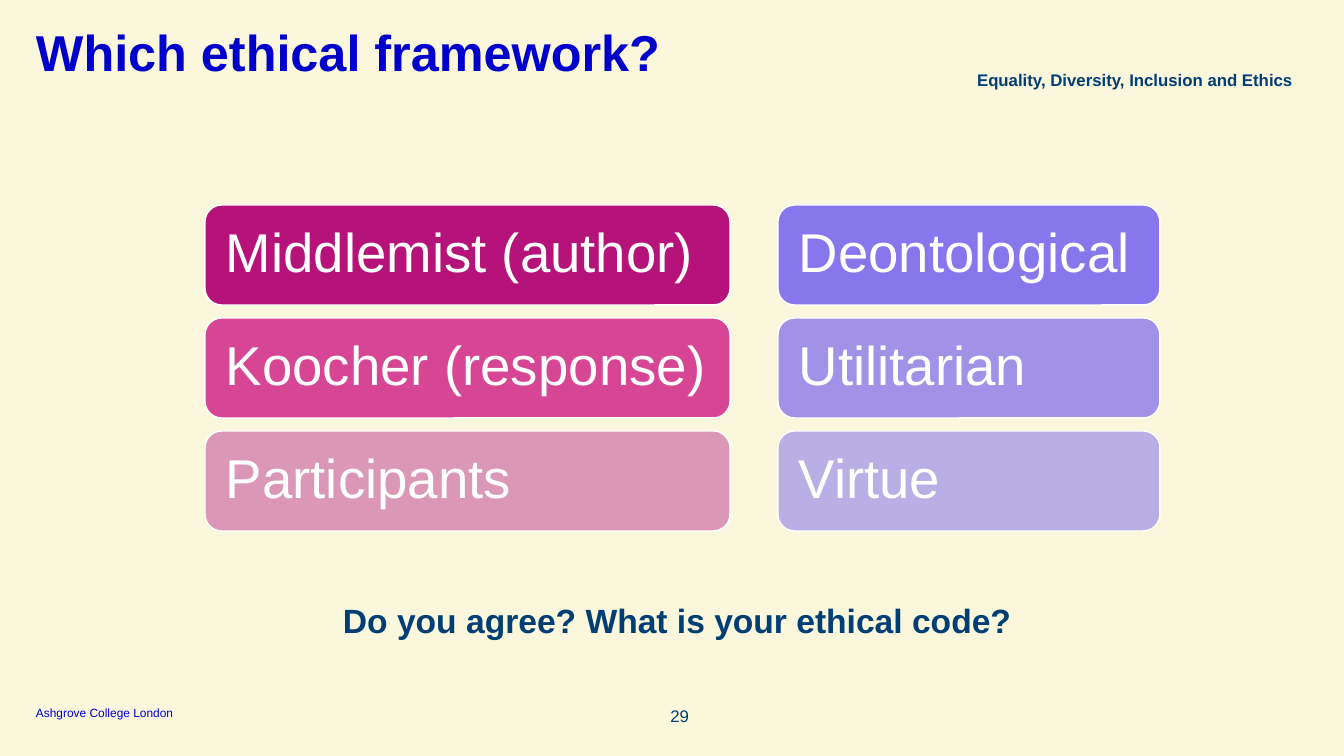
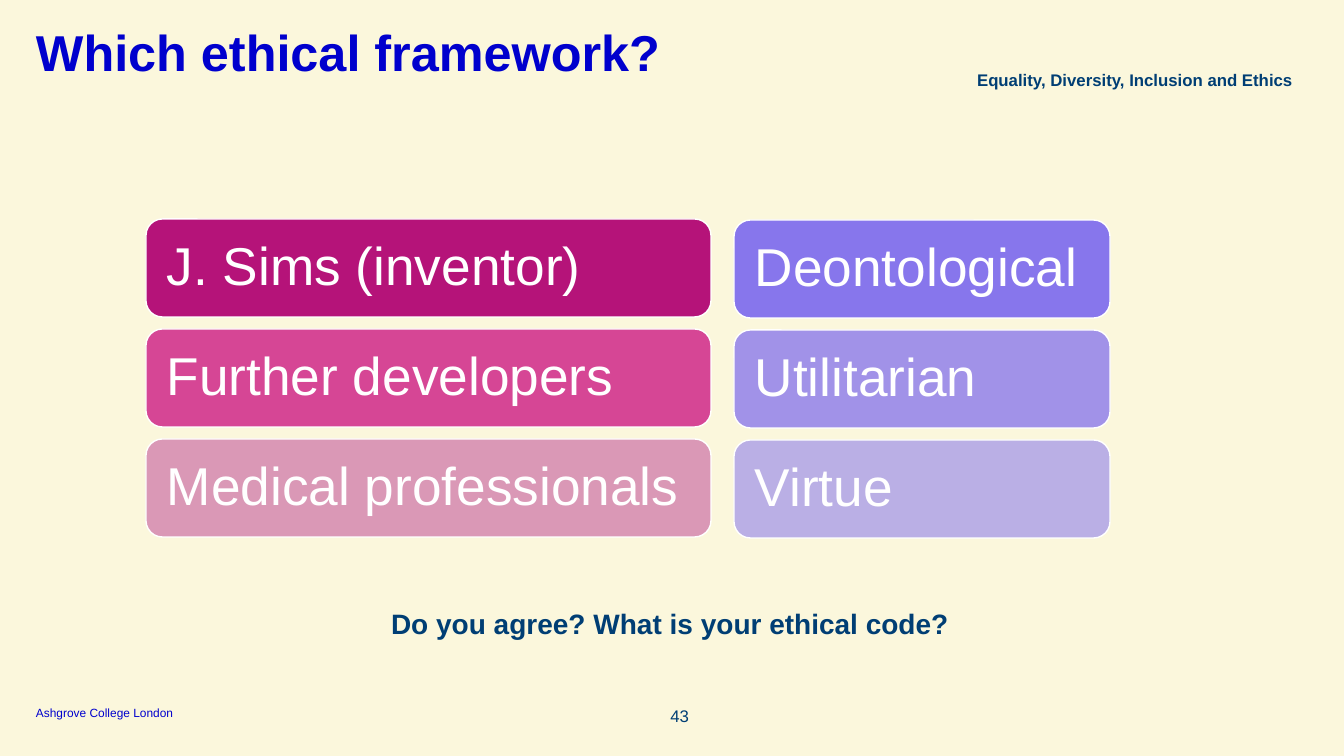
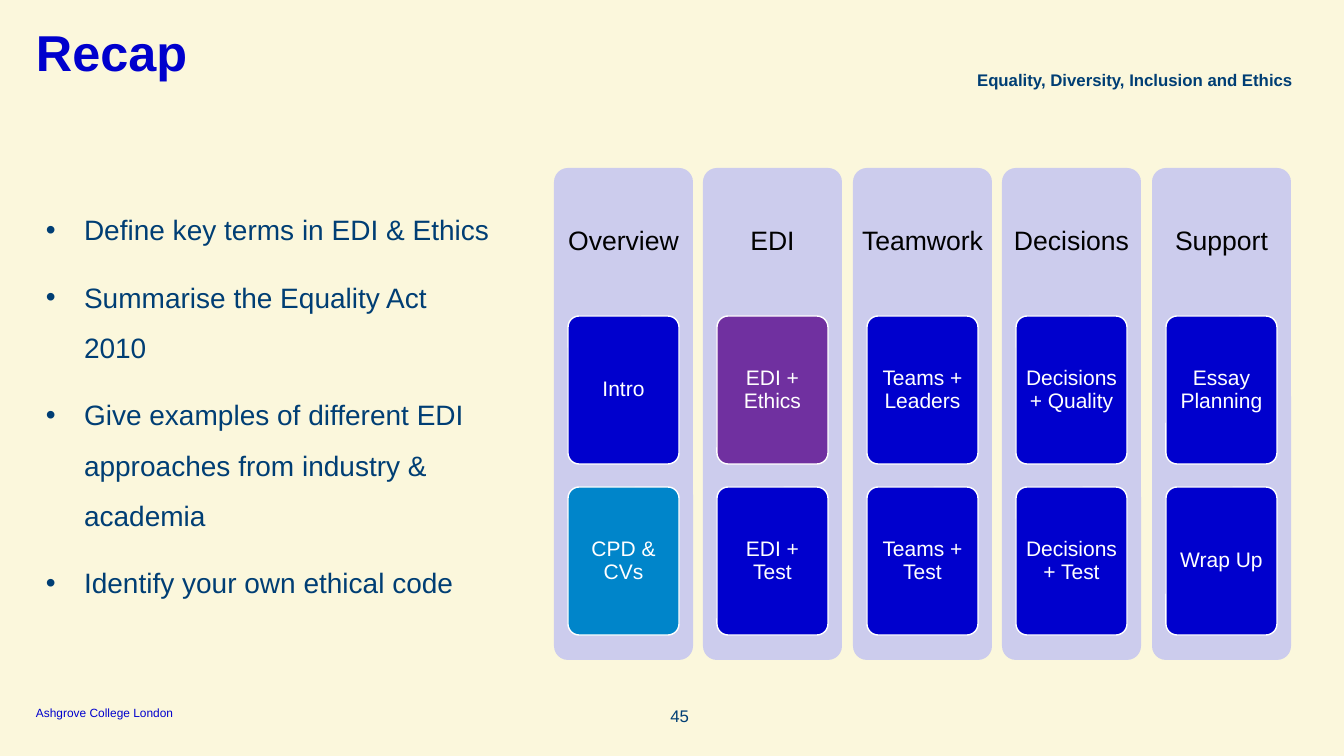
from dataclasses import dataclass
from typing import Optional

from lxml.etree import SubElement
from pptx import Presentation
from pptx.dml.color import RGBColor
from pptx.enum.shapes import MSO_SHAPE
from pptx.enum.text import MSO_ANCHOR, MSO_AUTO_SIZE, PP_ALIGN
from pptx.oxml.ns import qn
from pptx.util import Emu, Pt

SLIDE_WIDTH, SLIDE_HEIGHT = 1344, 756
EMU_PER_PX = 12192000 / SLIDE_WIDTH

CREAM = RGBColor(0xFB, 0xF7, 0xDC)
BLUE = RGBColor(0x00, 0x00, 0xCD)
NAVY = RGBColor(0x00, 0x3E, 0x74)
WHITE = RGBColor(0xFF, 0xFF, 0xFF)
BLACK = RGBColor(0x00, 0x00, 0x00)
MAGENTA = RGBColor(0xB5, 0x13, 0x79)
PINK = RGBColor(0xD6, 0x46, 0x95)
ROSE = RGBColor(0xDA, 0x98, 0xB6)
VIOLET = RGBColor(0x7B, 0x68, 0xEE)
LAVENDER = RGBColor(0xCC, 0xCC, 0xED)
SKY = RGBColor(0x00, 0x85, 0xCA)
PURPLE = RGBColor(0x70, 0x30, 0xA0)

FONT = "Arial"
LAYOUT_CONTENT, LAYOUT_TITLE_ONLY = 1, 5
INSTITUTION = "Ashgrove College London"
SECTION = "Equality, Diversity, Inclusion and Ethics"
QUESTION = "Do you agree? What is your ethical code?"


@dataclass(frozen=True)
class Box:
    left: int
    top: int
    width: int
    height: int

    def emu(self) -> list[Emu]:
        lengths = (self.left, self.top, self.width, self.height)
        return [px(length) for length in lengths]


@dataclass(frozen=True)
class Tile:
    label: str
    color: RGBColor
    opacity: int = 100


@dataclass(frozen=True)
class Stack:
    first: Box
    pitch: int
    tiles: tuple[Tile, ...]


@dataclass(frozen=True)
class FrameworkSlide:
    number: int
    tile_size: int
    stacks: tuple[Stack, ...]
    question_box: Box
    question_size: int


@dataclass(frozen=True)
class Theme:
    heading: str
    sessions: tuple[Tile, Tile]


FRAMEWORKS = (
    Tile("Deontological", VIOLET, 90),
    Tile("Utilitarian", VIOLET, 70),
    Tile("Virtue", VIOLET, 50),
)
FRAMEWORK_SLIDES = (
    FrameworkSlide(
        29, 39,
        (
            Stack(Box(205, 205, 525, 100), 113, (
                Tile("Middlemist (author)", MAGENTA),
                Tile("Koocher (response)", PINK),
                Tile("Participants", ROSE),
            )),
            Stack(Box(778, 205, 382, 100), 113, FRAMEWORKS),
        ),
        Box(333, 595, 711, 50), 24,
    ),
    FrameworkSlide(
        43, 38,
        (
            Stack(Box(146, 219, 565, 98), 110, (
                Tile("J. Sims (inventor)", MAGENTA),
                Tile("Further developers", PINK),
                Tile("Medical professionals", ROSE),
            )),
            Stack(Box(734, 220, 376, 98), 110, FRAMEWORKS),
        ),
        Box(381, 601, 652, 44), 20,
    ),
)
OBJECTIVES = (
    "Define key terms in EDI & Ethics",
    "Summarise the Equality Act 2010",
    "Give examples of different EDI approaches from industry & academia",
    "Identify your own ethical code",
)
THEMES = (
    Theme("Overview", (Tile("Intro", BLUE), Tile("CPD & CVs", SKY))),
    Theme("EDI", (Tile("EDI + Ethics", PURPLE), Tile("EDI + Test", BLUE))),
    Theme("Teamwork", (Tile("Teams + Leaders", BLUE), Tile("Teams + Test", BLUE))),
    Theme("Decisions", (Tile("Decisions + Quality", BLUE), Tile("Decisions + Test", BLUE))),
    Theme("Support", (Tile("Essay Planning", BLUE), Tile("Wrap Up", BLUE))),
)


def px(length: int) -> Emu:
    return Emu(round(length * EMU_PER_PX))


def write_text(
    holder,
    *lines: str,
    size: float,
    color: RGBColor,
    bold: bool = False,
    align: PP_ALIGN = PP_ALIGN.LEFT,
    anchor: MSO_ANCHOR = MSO_ANCHOR.TOP,
    insets: tuple[int, int] = (0, 0),
    line_spacing: float = 1.0,
    space: int = 0,
    bullet_indent: int = 0,
) -> None:
    frame = holder.text_frame
    frame.word_wrap = True
    frame.auto_size = MSO_AUTO_SIZE.NONE
    frame.vertical_anchor = anchor
    frame.margin_left = frame.margin_right = px(insets[0])
    frame.margin_top = frame.margin_bottom = px(insets[1])
    for index, line in enumerate(lines):
        paragraph = frame.add_paragraph() if index else frame.paragraphs[0]
        paragraph.alignment = align
        paragraph.line_spacing = line_spacing
        paragraph.space_before = paragraph.space_after = Pt(space)
        run = paragraph.add_run()
        run.text = line
        run.font.name = FONT
        run.font.size = Pt(size)
        run.font.bold = bold
        run.font.color.rgb = color
        if bullet_indent:
            properties = paragraph._p.get_or_add_pPr()
            properties.set("marL", str(px(bullet_indent)))
            properties.set("indent", str(-px(bullet_indent)))
            SubElement(properties, qn("a:buChar"), char="•")


def place(shape, box: Box) -> None:
    shape.left, shape.top, shape.width, shape.height = box.emu()


def add_label(slide, box: Box, text: str, **text_format) -> None:
    write_text(slide.shapes.add_textbox(*box.emu()), text, **text_format)


def add_panel(
    slide,
    box: Box,
    tile: Tile,
    outline: Optional[RGBColor] = WHITE,
    corner: Optional[float] = None,
    **text_format,
) -> None:
    panel = slide.shapes.add_shape(MSO_SHAPE.ROUNDED_RECTANGLE, *box.emu())
    panel.shadow.inherit = False
    if corner is not None:
        panel.adjustments[0] = corner
    panel.fill.solid()
    panel.fill.fore_color.rgb = tile.color
    if tile.opacity < 100:
        fill_color = panel.element.spPr.find(".//" + qn("a:srgbClr"))
        SubElement(fill_color, qn("a:alpha"), val=str(tile.opacity * 1000))
    if outline is None:
        panel.line.fill.background()
    else:
        panel.line.color.rgb = outline
        panel.line.width = Pt(1)
    if tile.label:
        write_text(panel, tile.label, color=WHITE, anchor=MSO_ANCHOR.MIDDLE,
                   line_spacing=0.9, **text_format)


def start_slide(deck, layout: int, title: str, number: int):
    slide = deck.slides.add_slide(deck.slide_layouts[layout])
    place(slide.shapes.title, Box(36, 28, 1272, 41))
    write_text(slide.shapes.title, title, size=36, color=BLUE, bold=True, line_spacing=0.9)
    add_label(slide, Box(36, 705, 156, 15), INSTITUTION,
              size=8.5, color=BLUE, anchor=MSO_ANCHOR.BOTTOM)
    add_label(slide, Box(654, 705, 35, 15), str(number),
              size=12, color=NAVY, align=PP_ALIGN.RIGHT, line_spacing=1.05)
    add_label(slide, Box(949, 69, 344, 34), SECTION,
              size=12, color=NAVY, bold=True, align=PP_ALIGN.RIGHT, line_spacing=1.05)
    return slide


def build_framework_slide(deck, content: FrameworkSlide) -> None:
    slide = start_slide(deck, LAYOUT_TITLE_ONLY, "Which ethical framework?", content.number)
    for stack in content.stacks:
        first = stack.first
        for row, tile in enumerate(stack.tiles):
            box = Box(first.left, first.top + row * stack.pitch, first.width, first.height)
            add_panel(slide, box, tile, size=content.tile_size, insets=(16, 16))
    add_label(slide, content.question_box, QUESTION,
              size=content.question_size, color=NAVY, bold=True, insets=(10, 5))


def add_theme(slide, left: int, width: int, theme: Theme) -> None:
    top, heading_height, session_pitch, margin = 168, 148, 171, 14
    add_panel(slide, Box(left, top, width, 492), Tile("", LAVENDER), outline=None, corner=0.1)
    add_label(slide, Box(left, top, width, heading_height), theme.heading,
              size=19, color=BLACK, align=PP_ALIGN.CENTER, anchor=MSO_ANCHOR.MIDDLE,
              insets=(8, 8), line_spacing=0.9)
    for row, session in enumerate(theme.sessions):
        session_top = top + heading_height + row * session_pitch
        add_panel(slide, Box(left + margin, session_top, width - 2 * margin, 148), session,
                  corner=0.1, size=15, align=PP_ALIGN.CENTER, insets=(4, 3))


def build_recap_slide(deck) -> None:
    slide = start_slide(deck, LAYOUT_CONTENT, "Recap", 45)
    objectives = slide.placeholders[1]
    place(objectives, Box(36, 191, 470, 411))
    write_text(objectives, *OBJECTIVES, size=20, color=NAVY, insets=(10, 5),
               line_spacing=1.5, space=6, bullet_indent=38)
    first_left, last_left, width = 554, 1152, 139
    for column, theme in enumerate(THEMES):
        offset = column * (last_left - first_left) // (len(THEMES) - 1)
        add_theme(slide, first_left + offset, width, theme)


def main() -> None:
    deck = Presentation()
    deck.slide_width, deck.slide_height = px(SLIDE_WIDTH), px(SLIDE_HEIGHT)
    background = deck.slide_master.background.fill
    background.solid()
    background.fore_color.rgb = CREAM
    for content in FRAMEWORK_SLIDES:
        build_framework_slide(deck, content)
    build_recap_slide(deck)
    deck.save("out.pptx")


if __name__ == "__main__":
    main()
